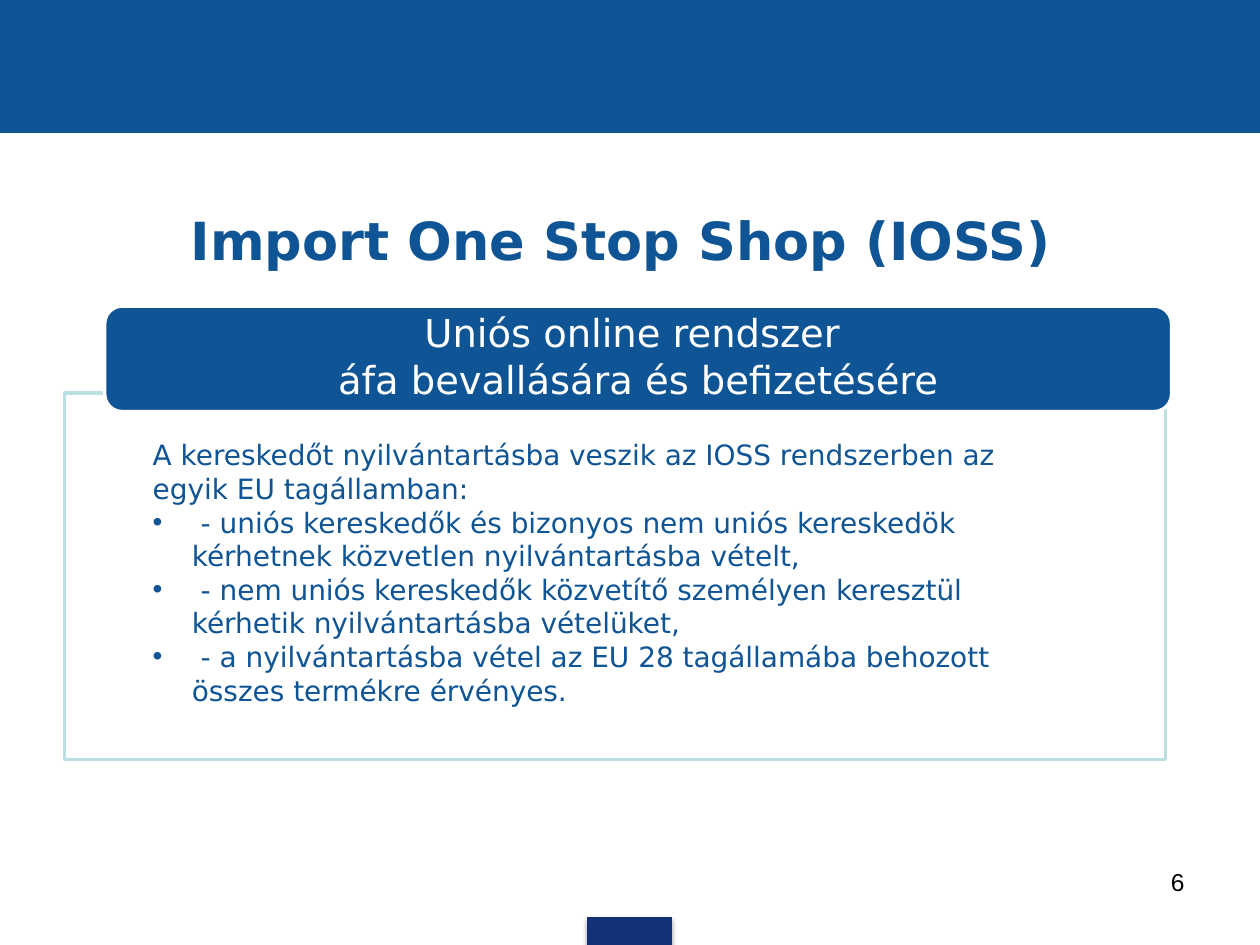
from dataclasses import dataclass
from typing import Optional

from lxml.etree import SubElement
from pptx import Presentation
from pptx.dml.color import RGBColor
from pptx.enum.shapes import MSO_SHAPE
from pptx.enum.text import MSO_ANCHOR, PP_ALIGN
from pptx.oxml.ns import qn
from pptx.util import Cm, Pt

BLUE = "0F5494"
NAVY = "133176"
WHITE = "FFFFFF"
PALE = "BBE0E3"
SANS = "DejaVu Sans"


@dataclass
class Panel:
    box: tuple  # left, top, width, height in cm
    fill: str
    line: str
    weight: float = 0.75
    preset: MSO_SHAPE = MSO_SHAPE.RECTANGLE


@dataclass
class Label:
    box: tuple
    paragraphs: list
    size: float
    color: str = BLUE
    font: str = SANS
    bold: bool = False
    align: Optional[PP_ALIGN] = None
    anchor: MSO_ANCHOR = MSO_ANCHOR.TOP
    insets: tuple = (0.25, 0.13, 0.25, 0.13)  # left, top, right, bottom
    hanging: float = 0
    bullets_from: Optional[int] = None


def rgb(value: str) -> RGBColor:
    return RGBColor.from_string(value)


def add_panel(slide, panel: Panel):
    shape = slide.shapes.add_shape(panel.preset, *map(Cm, panel.box))
    shape.shadow.inherit = False
    shape.fill.solid()
    shape.fill.fore_color.rgb = rgb(panel.fill)
    shape.line.color.rgb = rgb(panel.line)
    shape.line.width = Pt(panel.weight)
    return shape


def add_label(slide, label: Label) -> None:
    frame = slide.shapes.add_textbox(*map(Cm, label.box)).text_frame
    frame.word_wrap = True
    frame.vertical_anchor = label.anchor
    (frame.margin_left, frame.margin_top,
     frame.margin_right, frame.margin_bottom) = map(Cm, label.insets)
    frame.text = "\n".join(label.paragraphs)
    for index, paragraph in enumerate(frame.paragraphs):
        if label.align is not None:
            paragraph.alignment = label.align
        if label.bullets_from is not None and index >= label.bullets_from:
            add_bullet(paragraph, label.hanging)
        for run in paragraph.runs:
            run.font.name = label.font
            run.font.size = Pt(label.size)
            run.font.bold = label.bold
            run.font.color.rgb = rgb(label.color)


def add_bullet(paragraph, hanging: float) -> None:
    properties = paragraph._p.get_or_add_pPr()
    properties.set("marL", str(Cm(hanging)))
    properties.set("indent", str(-Cm(hanging)))
    SubElement(properties, qn("a:buFont"), typeface="Arial")
    SubElement(properties, qn("a:buChar"), char="•")


def set_alpha(color_element, percent: int) -> None:
    SubElement(color_element, qn("a:alpha"), val=str(percent * 1000))


def add_shadow(shape) -> None:
    effects = shape._element.spPr.find(qn("a:effectLst"))
    shadow = SubElement(effects, qn("a:outerShdw"), blurRad=str(Pt(3.1)),
                        dist=str(Pt(1.8)), dir="5400000", rotWithShape="0")
    set_alpha(SubElement(shadow, qn("a:srgbClr"), val="000000"), 35)


def main() -> None:
    presentation = Presentation()
    presentation.slide_width, presentation.slide_height = Cm(25.4), Cm(19.05)
    slide = presentation.slides.add_slide(presentation.slide_layouts[6])

    # Top band and footer tab
    add_panel(slide, Panel((0, 0, 25.4, 2.67), BLUE, BLUE))
    add_shadow(add_panel(slide, Panel((11.84, 18.49, 1.7, 0.56), NAVY, NAVY)))

    # Framed registration rules
    rules_box = (1.3, 7.92, 22.2, 7.39)
    frame = add_panel(slide, Panel(rules_box, WHITE, PALE, 2))
    set_alpha(frame._element.spPr.find(qn("a:solidFill"))[0], 90)
    add_label(slide, Label(rules_box, [
        "A kereskedőt nyilvántartásba veszik az IOSS rendszerben az egyik EU tagállamban:",
        " - uniós kereskedők és bizonyos nem uniós kereskedök kérhetnek közvetlen nyilvántartásba vételt,",
        " - nem uniós kereskedők közvetítő személyen keresztül kérhetik nyilvántartásba vételüket,",
        " - a nyilvántartásba vétel az EU 28 tagállamába behozott összes termékre érvényes.",
    ], 16, insets=(1.78, 0.91, 1.78, 0.3), hanging=0.79, bullets_from=1))

    # Title
    add_label(slide, Label((1.09, 3.73, 22.86, 2.21), ["Import One Stop Shop (IOSS)"],
                           30, bold=True, align=PP_ALIGN.CENTER,
                           anchor=MSO_ANCHOR.MIDDLE))

    # Heading pill over the frame
    add_panel(slide, Panel((2.11, 6.17, 21.51, 2.13), BLUE, WHITE, 2,
                           MSO_SHAPE.ROUNDED_RECTANGLE))
    add_label(slide, Label((2.21, 6.27, 21.31, 1.8),
                           ["Uniós online rendszer ", "áfa bevallására és befizetésére"],
                           22, WHITE, align=PP_ALIGN.CENTER,
                           anchor=MSO_ANCHOR.MIDDLE, insets=(0.61, 0, 0.61, 0)))

    # Page number
    add_label(slide, Label((18.21, 17.35, 5.92, 1.32), ["6"], 14, "000000", "Arial",
                           align=PP_ALIGN.RIGHT))

    presentation.save("out.pptx")


if __name__ == "__main__":
    main()
